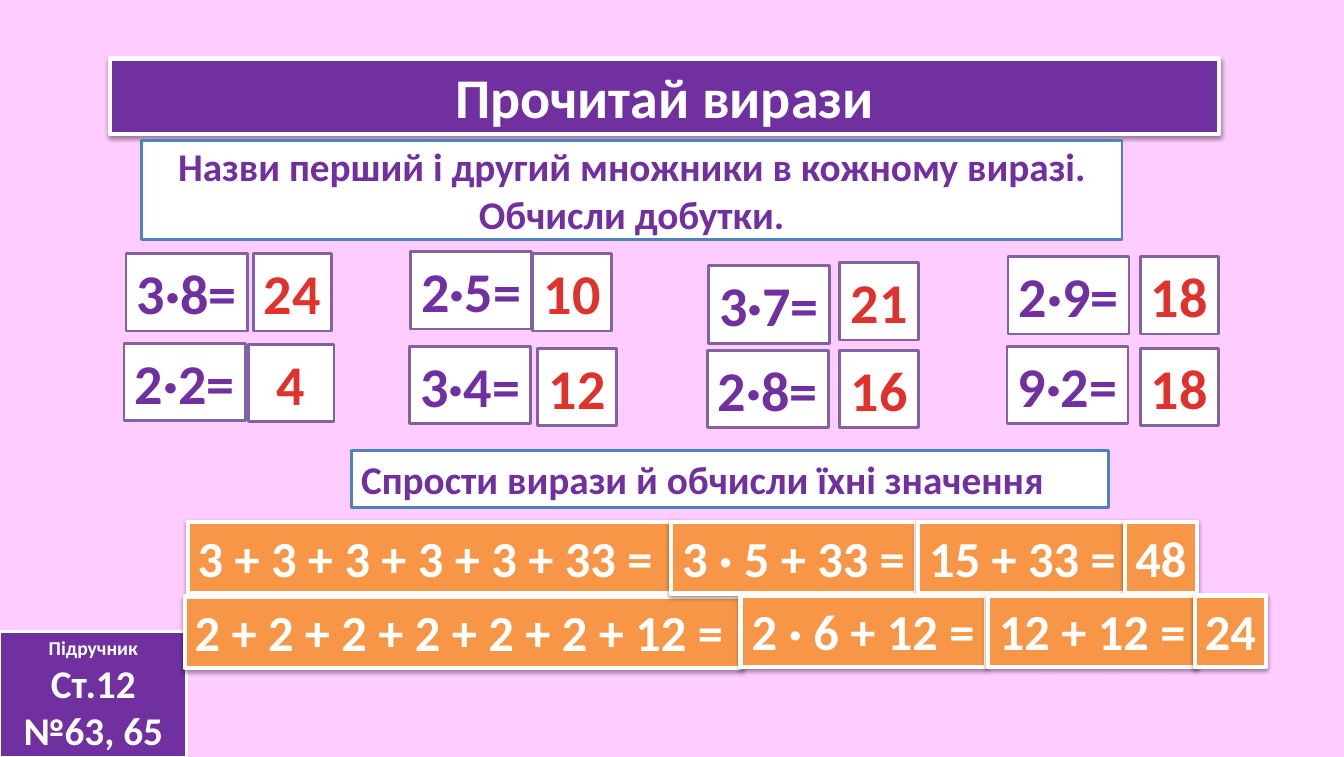
from lxml import etree
from pptx import Presentation
from pptx.dml.color import RGBColor
from pptx.enum.shapes import MSO_SHAPE
from pptx.enum.text import MSO_ANCHOR, MSO_AUTO_SIZE, PP_ALIGN
from pptx.oxml import parse_xml
from pptx.oxml.ns import nsdecls, qn
from pptx.util import Inches, Pt

PURPLE, WHITE, ORANGE = "7030A0", "FFFFFF", "F79646"
BLUE_LINE, VIOLET_LINE = "4F81BD", "8064A2"
RED, DARK_RED = "E0322D", "A2201C"

PRODUCTS = [
    ("3·8=", 1.25, 2.51, "24", 2.51, 2.51, 0.78),
    ("2·2=", 1.23, 3.4, "4", 2.46, 3.41, 0.85),
    ("2·5=", 4.07, 2.49, "10", 5.28, 2.51, 0.78),
    ("3·4=", 4.06, 3.43, "12", 5.33, 3.45, 0.78),
    ("3·7=", 7.02, 2.63, "21", 8.32, 2.6, 0.78),
    ("2·8=", 7.01, 3.47, "16", 8.32, 3.47, 0.78),
    ("2·9=", 9.99, 2.54, "18", 11.3, 2.54, 0.78),
    ("9·2=", 9.98, 3.43, "18", 11.3, 3.45, 0.78),
]
SUMS = [
    ("3 + 3 + 3 + 3 + 3 + 33 =", 1.86, 5.17, 4.85),
    ("2 + 2 + 2 + 2 + 2 + 2 + 12 =", 1.83, 5.91, 5.51),
]
STEPS = [
    (6.65, 5.17, ["3 · 5 + 33 =", "15 + 33 =", "48"]),
    (7.34, 5.9, ["2 · 6 + 12 =", "12 + 12 =", "24"]),
]
STEP_COLUMNS = [(0, 2.43), (2.45, 2.07), (4.5, 0.71)]


def color(value):
    return RGBColor.from_string(value)


def place(shape, left, top, width, height):
    shape.left, shape.top = Inches(left), Inches(top)
    shape.width, shape.height = Inches(width), Inches(height)


def paint(shape, fill, line, line_width):
    shape.fill.solid()
    shape.fill.fore_color.rgb = color(fill)
    shape.line.color.rgb = color(line)
    shape.line.width = Pt(line_width)
    shape.shadow.inherit = False


def add_shadow(shape):
    effects = shape._element.spPr.find(qn("a:effectLst"))
    effects.append(parse_xml(
        f'<a:outerShdw {nsdecls("a")} blurRad="40000" dist="20000" dir="5400000" rotWithShape="0">'
        '<a:srgbClr val="000000"><a:alpha val="38000"/></a:srgbClr></a:outerShdw>'))


def write(shape, text, size, font_color, align=PP_ALIGN.CENTER, wrap=True, grow=False):
    frame = shape.text_frame
    frame.text = text
    frame.word_wrap = wrap
    frame.auto_size = MSO_AUTO_SIZE.SHAPE_TO_FIT_TEXT if grow else MSO_AUTO_SIZE.NONE
    frame.vertical_anchor = MSO_ANCHOR.TOP if grow else MSO_ANCHOR.MIDDLE
    for paragraph in frame.paragraphs:
        paragraph.alignment = align
        for run in paragraph.runs:
            run.font.name = "Calibri"
            run.font.size = Pt(size)
            run.font.bold = True
            run.font.color.rgb = color(font_color)


def add_box(slide, position, text, size, fill, line, line_width, font_color, **text_options):
    shape = slide.shapes.add_shape(MSO_SHAPE.RECTANGLE, 0, 0, 0, 0)
    place(shape, *position)
    paint(shape, fill, line, line_width)
    write(shape, text, size, font_color, **text_options)
    return shape


def add_title(slide):
    title = slide.shapes.title
    place(title, 1.09, 0.58, 10.99, 0.75)
    paint(title, PURPLE, WHITE, 3)
    add_shadow(title)
    write(title, "Прочитай вирази", 40, WHITE)


def add_textbook_reference(slide):
    box = add_box(slide, (0, 6.26, 1.85, 1.24), "Підручник\nСт.12 №63, 65",
                  28, PURPLE, WHITE, 2, WHITE)
    box.text_frame.paragraphs[0].runs[0].font.size = Pt(14)


def add_expression(slide, text, left, top):
    box = add_box(slide, (left, top, 1.2, 0.77), text, 40, WHITE, VIOLET_LINE, 2,
                  PURPLE, wrap=False, grow=True)
    properties = box.text_frame.paragraphs[0].runs[0].font._element
    outline = etree.Element(qn("a:ln"), w="17780")
    fill = etree.SubElement(outline, qn("a:solidFill"))
    etree.SubElement(fill, qn("a:srgbClr"), val=WHITE)
    properties.insert(0, outline)


def add_answer(slide, text, left, top, width):
    box = add_box(slide, (left, top, width, 0.77), text, 40, WHITE, VIOLET_LINE, 2,
                  RED, wrap=len(text) == 1, grow=True)
    font = box.text_frame.paragraphs[0].runs[0].font
    font._element.set("spc", "50")
    font.fill.gradient()
    font.fill.gradient_angle = 270
    for stop, position, value in zip(font.fill.gradient_stops, (0.25, 1), (RED, DARK_RED)):
        stop.position = position
        stop.color.rgb = color(value)


def add_orange_box(slide, text, left, top, width, **text_options):
    box = add_box(slide, (left, top, width, 0.71), text, 36, ORANGE, WHITE, 3,
                  WHITE, grow=True, **text_options)
    add_shadow(box)


def main():
    presentation = Presentation()
    presentation.slide_width, presentation.slide_height = Inches(13.32), Inches(7.5)
    slide = presentation.slides.add_slide(presentation.slide_layouts[5])
    slide.background.fill.solid()
    slide.background.fill.fore_color.rgb = color("FFCCFF")

    add_title(slide)
    add_textbook_reference(slide)
    add_box(slide, (1.4, 1.39, 9.72, 0.98),
            "Назви перший і другий множники в кожному виразі. Обчисли добутки.",
            28, WHITE, BLUE_LINE, 2, PURPLE)
    for expression, left, top, *answer in PRODUCTS:
        add_expression(slide, expression, left, top)
    for expression, left, top, *answer in PRODUCTS:
        add_answer(slide, *answer)

    add_box(slide, (3.48, 4.46, 7.51, 0.57), "Спрости вирази й обчисли їхні значення",
            28, WHITE, BLUE_LINE, 2, PURPLE, align=PP_ALIGN.LEFT, grow=True)
    for text, left, top, width in SUMS:
        add_orange_box(slide, text, left, top, width, align=PP_ALIGN.LEFT)
    for left, top, texts in STEPS:
        for text, (offset, width) in zip(texts, STEP_COLUMNS):
            add_orange_box(slide, text, left + offset, top, width, wrap=False)

    presentation.save("out.pptx")


if __name__ == "__main__":
    main()
